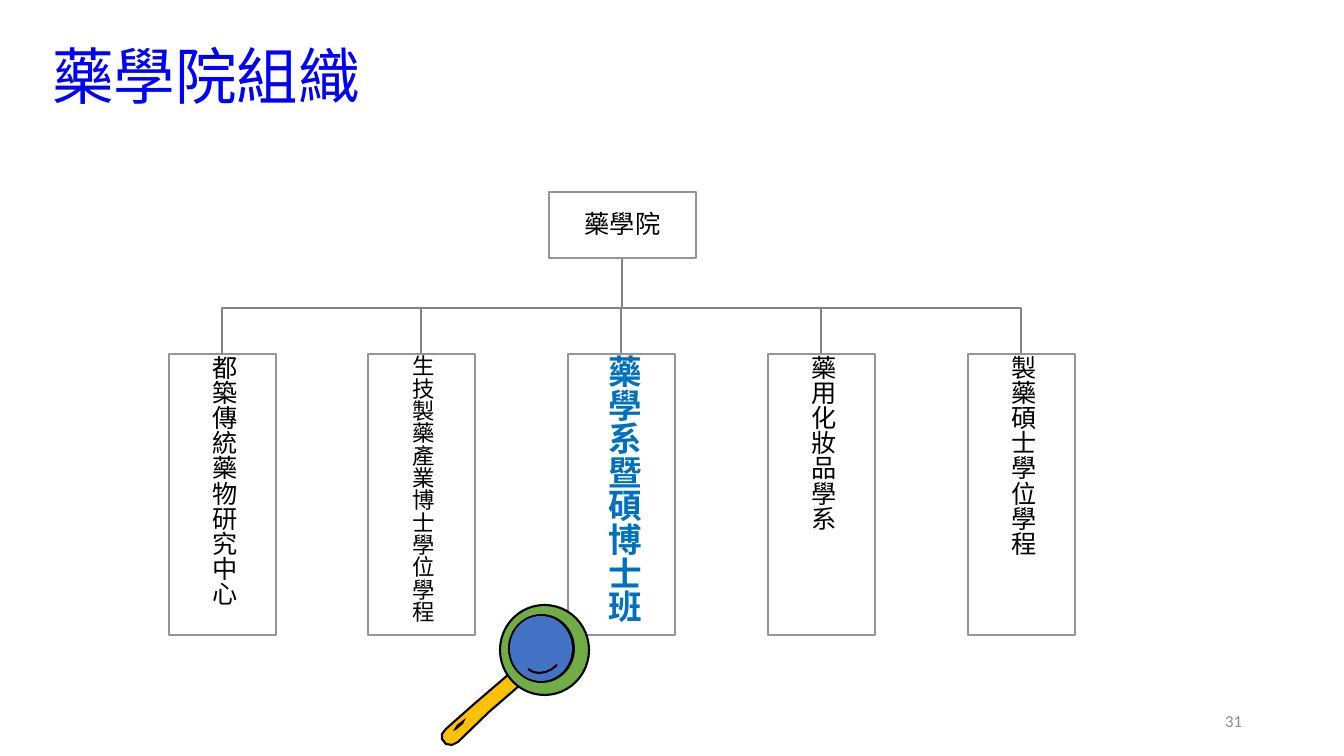
from pptx import Presentation
from pptx.dml.color import RGBColor
from pptx.enum.shapes import MSO_SHAPE
from pptx.enum.text import MSO_ANCHOR, PP_ALIGN
from pptx.util import Pt

LEFT, CENTER, RIGHT = PP_ALIGN.LEFT, PP_ALIGN.CENTER, PP_ALIGN.RIGHT
MIDDLE = MSO_ANCHOR.MIDDLE
RECT, OVAL = MSO_SHAPE.RECTANGLE, MSO_SHAPE.OVAL

WHITE = RGBColor(0xFF, 0xFF, 0xFF)
BLACK = RGBColor(0, 0, 0)
TITLE_BLUE = RGBColor(0, 0, 0xFF)
FOCUS_BLUE = RGBColor(0, 0x70, 0xC0)
LENS_BLUE = RGBColor(0x44, 0x72, 0xC4)
GREEN = RGBColor(0x70, 0xAD, 0x47)
AMBER = RGBColor(0xFF, 0xC0, 0)
BORDER = RGBColor(0x96, 0x96, 0x96)
BRANCH = RGBColor(0x84, 0x84, 0x84)
NUMBER_GREY = RGBColor(0x8C, 0x8C, 0x8C)

CJK, LATIN = "Noto Sans CJK SC", "Calibri"
SLIDE_W, SLIDE_H = 1344, 756
SCALE = 12192000 / SLIDE_W

DEPARTMENTS = [
    ("都築傳統藥物研究中心", {"size": Pt(18)}),
    ("生技製藥產業博士學位學程", {"size": Pt(16)}),
    ("藥學系暨碩博士班", {"size": Pt(24), "bold": True, "color": FOCUS_BLUE}),
    ("藥用化妝品學系", {"size": Pt(18)}),
    ("製藥碩士學位學程", {"size": Pt(18)}),
]


def px(n):
    return round(n * SCALE)


def paint(sp, fill=None, line=None, width=1.0):
    sp.shadow.inherit = False
    if fill is None:
        sp.fill.background()
    else:
        sp.fill.solid()
        sp.fill.fore_color.rgb = fill
    if line is None:
        sp.line.fill.background()
    else:
        sp.line.color.rgb = line
        sp.line.width = Pt(width)
    return sp


def write(sp, text, align, margin=None, spacing=None, color=BLACK, name=CJK, **font):
    tf = sp.text_frame
    tf.word_wrap = True
    tf.vertical_anchor = MIDDLE
    if margin is not None:
        for side in ("left", "top", "right", "bottom"):
            setattr(tf, f"margin_{side}", px(margin))
    p = tf.paragraphs[0]
    p.alignment = align
    p.line_spacing = spacing
    r = p.add_run()
    r.text = text
    for key, value in {"name": name, **font}.items():
        setattr(r.font, key, value)
    r.font.color.rgb = color
    latin = r.font._element.find("{*}latin")
    east_asian = latin.makeelement(latin.tag.replace("latin", "ea"), {"typeface": name})
    latin.addnext(east_asian)


def add_shape(slide, kind, x, y, w, h, **style):
    return paint(slide.shapes.add_shape(kind, px(x), px(y), px(w), px(h)), **style)


def add_outline(slide, points, closed=False, **style):
    (x, y), *rest = points
    builder = slide.shapes.build_freeform(px(x), px(y))
    builder.add_line_segments([(px(a), px(b)) for a, b in rest], close=closed)
    return paint(builder.convert_to_shape(), **style)


def add_title(slide, x, y, w, h):
    sp = slide.shapes.title
    sp.left, sp.top, sp.width, sp.height = px(x), px(y), px(w), px(h)
    write(sp, "藥學院組織", LEFT, spacing=0.9, color=TITLE_BLUE, size=Pt(44))


def add_organisation(slide, x, y, w, h):
    """Draw the college above a row of departments with vertical names."""
    college_w, college_h, box_w, box_h = 147, 66, 107, 281
    middle, row_y, bus_y = x + w // 2, y + h - box_h, y + 116
    lefts = [x + i * (w - box_w) // (len(DEPARTMENTS) - 1) for i in range(len(DEPARTMENTS))]
    for left in lefts:
        center = left + box_w // 2
        add_outline(slide, [(middle, y + college_h), (middle, bus_y),
                            (center, bus_y), (center, row_y)], line=BRANCH)
    frame = {"fill": WHITE, "line": BORDER, "width": 1.5}
    sp = add_shape(slide, RECT, middle - college_w // 2, y, college_w, college_h, **frame)
    write(sp, "藥學院", CENTER, margin=1, spacing=0.9, size=Pt(18))
    for left, (name, font) in zip(lefts, DEPARTMENTS):
        sp = add_shape(slide, RECT, left, row_y, box_w, box_h, **frame)
        write(sp, name, CENTER, margin=1, spacing=0.9, **font)
        sp.text_frame._txBody.bodyPr.set("vert", "eaVert")


def add_magnifier(slide, x, y):
    def at(*points):
        return [(x + a, y + b) for a, b in points]

    ink = {"line": BLACK, "width": 1.5}
    add_outline(slide, at((67, 71), (78, 82), (48, 108), (17, 138), (11, 141), (5, 140),
                          (1, 135), (1, 130), (5, 125), (32, 101)),
                closed=True, fill=AMBER, **ink)
    add_outline(slide, at((12, 127), (16, 121), (25, 114), (22, 120), (15, 126)),
                closed=True, fill=BLACK)
    add_shape(slide, OVAL, x + 59, y + 1, 89, 90, fill=GREEN, **ink)
    add_shape(slide, OVAL, x + 67, y + 10, 67, 69, fill=BLACK)
    add_shape(slide, OVAL, x + 69, y + 12, 62, 65, fill=LENS_BLUE)
    add_outline(slide, at((87, 65), (92, 68), (98, 69), (105, 68), (111, 65), (116, 61)), **ink)


def add_slide_number(slide, x, y, w, h):
    sp = slide.shapes.add_textbox(px(x), px(y), px(w), px(h))
    write(sp, "31", RIGHT, color=NUMBER_GREY, name=LATIN, size=Pt(12))


def main():
    prs = Presentation()
    prs.slide_width, prs.slide_height = px(SLIDE_W), px(SLIDE_H)
    slide = prs.slides.add_slide(prs.slide_layouts[5])
    add_title(slide, 42, 6, 1159, 147)
    add_organisation(slide, 169, 192, 906, 443)
    add_magnifier(slide, 441, 604)
    add_slide_number(slide, 950, 701, 302, 40)
    prs.save("out.pptx")


if __name__ == "__main__":
    main()
